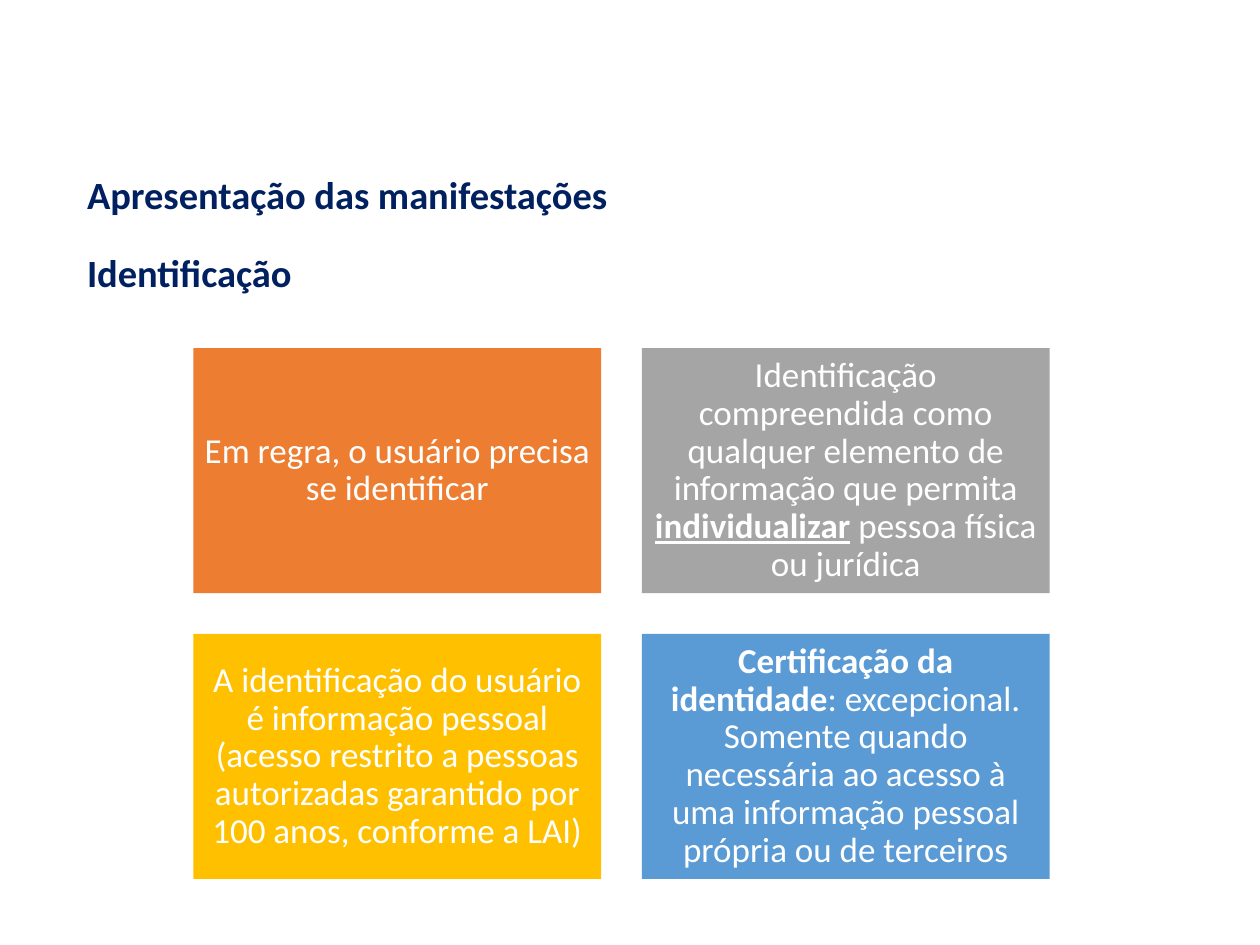
from pptx import Presentation
from pptx.dml.color import RGBColor
from pptx.enum.shapes import MSO_SHAPE
from pptx.enum.text import MSO_ANCHOR, MSO_AUTO_SIZE, PP_ALIGN
from pptx.util import Cm, Pt

HUES = {
    "navy": "002060",
    "white": "FFFFFF",
    "orange": "ED7D31",
    "gray": "A5A5A5",
    "gold": "FFC000",
    "blue": "5B9BD5",
}


class Deck:
    face = "Calibri"

    def __init__(self, wide, high):
        self.prs = Presentation()
        self.prs.slide_width, self.prs.slide_height = Cm(wide), Cm(high)
        self.slide = self.prs.slides.add_slide(self.prs.slide_layouts[5])

    def hue(self, name):
        return RGBColor.from_string(HUES[name])

    def run(self, para, text, size, hue, bold=False, line=False):
        run = para.add_run()
        run.text = text
        font = run.font
        font.name, font.size = self.face, Pt(size)
        font.bold, font.underline = bold, line
        font.color.rgb = self.hue(hue)

    def title(self, lines, left, top, wide, high):
        box = self.slide.shapes.title
        box.left, box.top, box.width, box.height = map(Cm, (left, top, wide, high))
        frame = box.text_frame
        frame.word_wrap = True
        frame.auto_size = MSO_AUTO_SIZE.NONE
        frame.vertical_anchor = MSO_ANCHOR.TOP
        for i, text in enumerate(lines):
            para = frame.add_paragraph() if i else frame.paragraphs[0]
            para.alignment = PP_ALIGN.LEFT
            para.space_before = Pt(18 if i else 0)
            self.run(para, text, 22, "navy", bold=True)

    def card(self, hue, runs, left, top, wide, high):
        box = self.slide.shapes.add_shape(
            MSO_SHAPE.RECTANGLE, *map(Cm, (left, top, wide, high)))
        box.shadow.inherit = False
        box.fill.solid()
        box.fill.fore_color.rgb = self.hue(hue)
        box.line.fill.background()
        frame = box.text_frame
        frame.word_wrap = True
        frame.vertical_anchor = MSO_ANCHOR.MIDDLE
        frame.margin_left = frame.margin_right = Cm(0.2)
        frame.margin_top = frame.margin_bottom = Cm(0.2)
        para = frame.paragraphs[0]
        para.alignment = PP_ALIGN.CENTER
        para.line_spacing = 0.9
        for text, *marks in runs:
            self.run(para, text, 20, "white", *marks)


# Each card: fill, then runs of text with bold and underline flags
CARDS = [
    ("orange", [("Em regra, o usuário precisa se identificar",)]),
    ("gray", [
        ("Identificação compreendida como qualquer elemento de "
         "informação que permita ",),
        ("individualizar", True, True),
        (" pessoa física ou jurídica",),
    ]),
    ("gold", [
        ("A identificação do usuário é informação pessoal (acesso restrito a "
         "pessoas autorizadas garantido por 100 anos, conforme a LAI)",),
    ]),
    ("blue", [
        ("Certificação da identidade", True),
        (": excepcional. Somente quando necessária ao acesso à uma "
         "informação pessoal própria ou de terceiros",),
    ]),
]


def main():
    deck = Deck(25.4, 19.05)

    # Heading
    deck.title(["Apresentação das manifestações", "Identificação"],
               1.5, 3.33, 14.88, 3.4)

    # Two by two grid of cards
    left, top, wide, high, gap = 3.9, 7.02, 8.22, 4.94, 0.82
    for i, (hue, runs) in enumerate(CARDS):
        row, col = divmod(i, 2)
        deck.card(hue, runs, left + col * (wide + gap),
                  top + row * (high + gap), wide, high)

    deck.prs.save("out.pptx")


if __name__ == "__main__":
    main()
